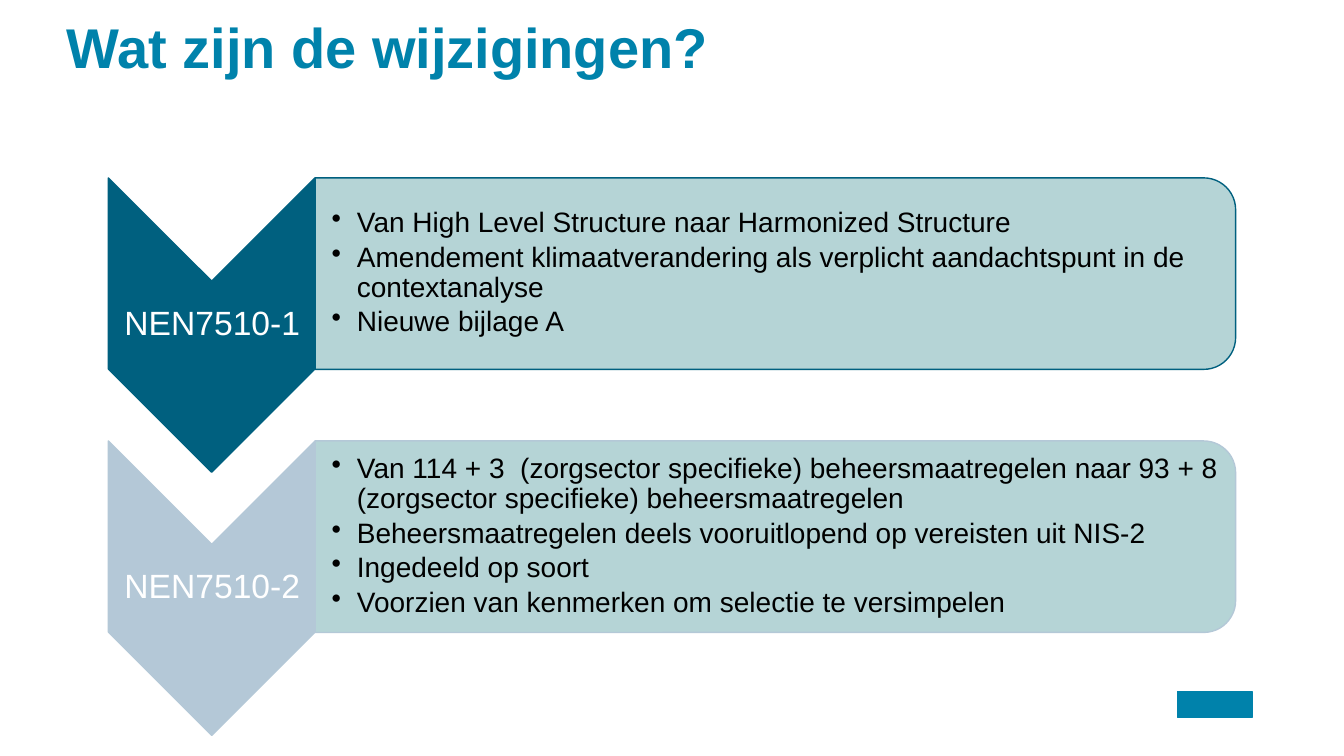
from lxml import etree
from pptx import Presentation
from pptx.dml.color import RGBColor
from pptx.enum.shapes import MSO_SHAPE
from pptx.enum.text import MSO_ANCHOR, PP_ALIGN
from pptx.oxml.ns import qn
from pptx.util import Inches, Pt

COLORS = {
    "title": "0082AB",
    "dark": "00607F",
    "light": "B4C8D7",
    "panel": "AED0D2",
    "white": "FFFFFF",
    "black": "000000",
}

STEPS = [
    ("NEN7510-1", "dark", [
        "Van High Level Structure naar Harmonized Structure",
        "Amendement klimaatverandering als verplicht aandachtspunt in de contextanalyse",
        "Nieuwe bijlage A",
    ]),
    ("NEN7510-2", "light", [
        "Van 114 + 3  (zorgsector specifieke) beheersmaatregelen naar 93 + 8 "
        "(zorgsector specifieke) beheersmaatregelen",
        "Beheersmaatregelen deels vooruitlopend op vereisten uit NIS-2",
        "Ingedeeld op soort",
        "Voorzien van kenmerken om selectie te versimpelen",
    ]),
]

prs = Presentation()
prs.slide_width, prs.slide_height = Inches(13.33), Inches(7.5)
s = prs.slides.add_slide(prs.slide_layouts[6])


def add_text(lines, x, y, w, h, size, color, bold=False, align=PP_ALIGN.LEFT,
             anchor=MSO_ANCHOR.MIDDLE, inset=0, left_inset=0, spacing=0.9,
             after=0, bullet=False):
    tf = s.shapes.add_textbox(Inches(x), Inches(y), Inches(w), Inches(h)).text_frame
    tf.word_wrap = True
    tf.vertical_anchor = anchor
    tf.margin_left = Inches(left_inset or inset)
    tf.margin_right = tf.margin_top = tf.margin_bottom = Inches(inset)
    for i, line in enumerate(lines):
        p = tf.paragraphs[0] if i == 0 else tf.add_paragraph()
        p.alignment = align
        p.line_spacing = spacing
        p.space_after = Pt(after)
        if bullet:
            pPr = p._p.get_or_add_pPr()
            pPr.set("marL", str(Inches(0.25)))
            pPr.set("indent", str(Inches(-0.25)))
            etree.SubElement(pPr, qn("a:buChar")).set("char", "•")
        r = p.add_run()
        r.text = line
        r.font.name = "Arial"
        r.font.size = Pt(size)
        r.font.bold = bold
        r.font.color.rgb = RGBColor.from_string(COLORS[color])


def add_block(kind, x, y, w, h, fill, line, rotation=0):
    sp = s.shapes.add_shape(kind, Inches(x), Inches(y), Inches(w), Inches(h))
    sp.rotation = rotation
    sp.shadow.inherit = False
    sp.fill.solid()
    sp.fill.fore_color.rgb = RGBColor.from_string(COLORS[fill])
    sp.line.color.rgb = RGBColor.from_string(COLORS[line])
    sp.line.width = Pt(1)
    return sp


# Title
add_text(["Wat zijn de wijzigingen?"], 0.66, 0.22, 11.5, 0.65, 40, "title",
         bold=True, anchor=MSO_ANCHOR.TOP, spacing=0.87)

# Logo placeholder
add_block(MSO_SHAPE.RECTANGLE, 11.68, 6.86, 0.74, 0.26, "title", "title")

# One chevron and one bullet panel per part of the standard
for i, (label, accent, bullets) in enumerate(STEPS):
    dy = i * 2.61
    add_block(MSO_SHAPE.CHEVRON, 0.64, 2.2 + dy, 2.92, 2.05, accent, accent, 90)
    add_text([label], 1.08, 2.78 + dy, 2.05, 0.88, 24, "white",
             align=PP_ALIGN.CENTER, inset=0.02)

    panel = add_block(MSO_SHAPE.ROUND_2_SAME_RECTANGLE, 6.74, -1.85 + dy, 1.9, 9.13,
                      "panel", accent, 90)
    color = panel.fill._xPr.find(qn("a:solidFill"))[0]
    etree.SubElement(color, qn("a:alpha")).set("val", "90000")
    add_text(bullets, 3.13, 1.85 + dy, 9.03, 1.72, 20, "black",
             inset=0.01, left_inset=0.16, after=3, bullet=True)

prs.save("out.pptx")
